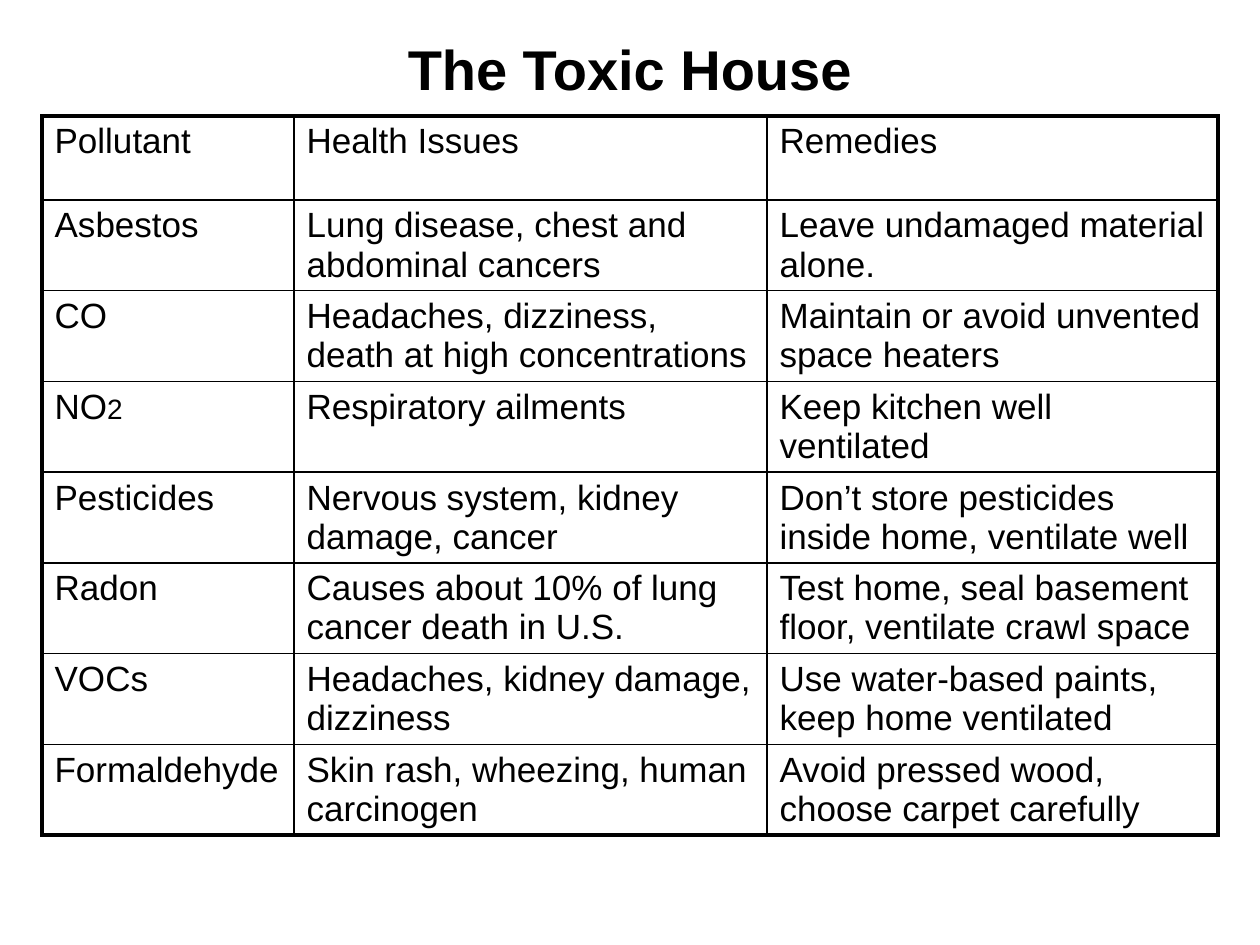
"""Build the Toxic House slide: a title above a table of household pollutants."""
import pptx
import pptx.dml.color
import pptx.enum.text
import pptx.oxml
import pptx.oxml.ns
import pptx.util

SCALE = 914400 / 126
BLACK = "000000"
THIN, THICK = 1, 2.25
COLUMN_WIDTHS = (252, 473, 451)
HEADER_HEIGHT, ROW_HEIGHT = 84, 72
ROWS = (
    ("Pollutant", "Health Issues", "Remedies"),
    ("Asbestos", "Lung disease, chest and abdominal cancers", "Leave undamaged material alone."),
    ("CO", "Headaches, dizziness, death at high concentrations", "Maintain or avoid unvented space heaters"),
    (("NO", "2"), "Respiratory ailments", "Keep kitchen well ventilated"),
    ("Pesticides", "Nervous system, kidney damage, cancer", "Don’t store pesticides inside home, ventilate well"),
    ("Radon", "Causes about 10% of lung cancer death in U.S.", "Test home, seal basement floor, ventilate crawl space"),
    ("VOCs", "Headaches, kidney damage, dizziness", "Use water-based paints, keep home ventilated"),
    ("Formaldehyde", "Skin rash, wheezing, human carcinogen", "Avoid pressed wood, choose carpet carefully"),
)


def px(length):
    return pptx.util.Emu(round(length * SCALE))


def color(value):
    return pptx.dml.color.RGBColor.from_string(value)


def assign(target, values):
    for name, value in values.items():
        setattr(target, name, value)


class SlideBuilder:
    def __init__(self, slide, font_name="Arial", ink=BLACK):
        self.slide = slide
        self.font_name = font_name
        self.ink = ink

    def style(self, font, size, bold=False):
        assign(font, {"name": self.font_name, "size": pptx.util.Pt(size), "bold": bold})
        font.color.rgb = color(self.ink)

    def title(self, text, left, top, width, height):
        shape = self.slide.shapes.title
        assign(shape, {"left": px(left), "top": px(top), "width": px(width), "height": px(height)})
        frame = shape.text_frame
        frame.vertical_anchor = pptx.enum.text.MSO_ANCHOR.MIDDLE
        paragraph = frame.paragraphs[0]
        paragraph.alignment = pptx.enum.text.PP_ALIGN.CENTER
        run = paragraph.add_run()
        run.text = text
        self.style(run.font, 32, bold=True)

    def border(self, cell, edges):
        properties = cell._tc.get_or_add_tcPr()
        for index, (side, weight) in enumerate(edges.items()):
            line = pptx.oxml.parse_xml(
                f'<a:ln{side} {pptx.oxml.ns.nsdecls("a")} w="{pptx.util.Pt(weight)}">'
                f'<a:solidFill><a:srgbClr val="{self.ink}"/></a:solidFill></a:ln{side}>'
            )
            properties.insert(index, line)

    def cell(self, cell, content):
        cell.fill.background()
        parts = (content,) if isinstance(content, str) else content
        for text, size in zip(parts, (20, 16)):
            run = cell.text_frame.paragraphs[0].add_run()
            run.text = text
            self.style(run.font, size)

    def table(self, rows, left, top, widths, heights):
        last_row, last_column = len(rows) - 1, len(widths) - 1
        frame = self.slide.shapes.add_table(
            len(rows), len(widths), px(left), px(top), px(sum(widths)), px(sum(heights))
        )
        table = frame.table
        assign(table, {"first_row": False, "horz_banding": False})
        for column, width in zip(table.columns, widths):
            column.width = px(width)
        for row, height in zip(table.rows, heights):
            row.height = px(height)
        for row_index, row in enumerate(rows):
            for column_index, content in enumerate(row):
                cell = table.cell(row_index, column_index)
                self.cell(cell, content)
                self.border(cell, {
                    "L": THICK if column_index == 0 else THIN,
                    "R": THICK if column_index == last_column else THIN,
                    "T": THICK if row_index == 0 else THIN,
                    "B": THICK if row_index == last_row else THIN,
                })


def main():
    presentation = pptx.Presentation()
    assign(presentation, {"slide_width": px(1260), "slide_height": px(945)})
    builder = SlideBuilder(presentation.slides.add_slide(presentation.slide_layouts[5]))
    builder.title("The Toxic House", 0, 0, 1260, 136)
    heights = [HEADER_HEIGHT] + [ROW_HEIGHT] * (len(ROWS) - 1)
    builder.table(ROWS, 42, 116, COLUMN_WIDTHS, heights)
    presentation.save("out.pptx")


if __name__ == "__main__":
    main()
